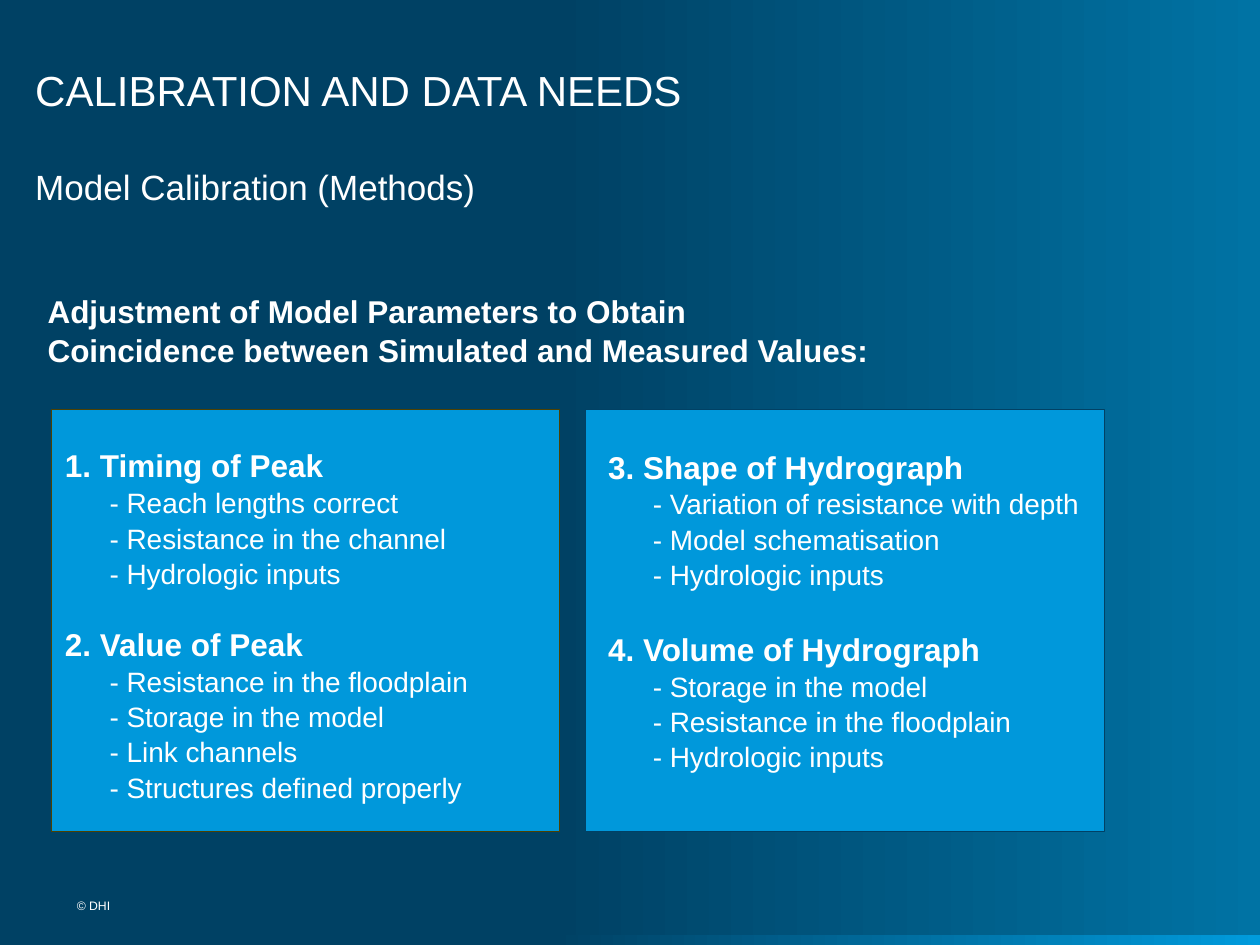
"""Build the model calibration methods slide."""
import pptx
import pptx.dml.color
import pptx.enum.shapes
import pptx.enum.text
import pptx.util
from dataclasses import dataclass

Cm = pptx.util.Cm
Pt = pptx.util.Pt


@dataclass(frozen=True)
class Theme:
    font: str = "Arial"
    text: str = "FFFFFF"
    dark: str = "004164"
    background_end: str = "0073A4"
    strip_end: str = "009BDC"
    panel: str = "0098DB"
    left_outline: str = "4D4102"
    right_outline: str = "004165"
    title_size: int = 24
    subtitle_size: int = 20
    heading_size: int = 18
    item_size: int = 16
    footer_size: int = 7


theme = Theme()


def paint_gradient(fill, end_color):
    fill.gradient()
    fill.gradient_angle = 0
    for stop, position, color in zip(fill.gradient_stops, (0.44, 1), (theme.dark, end_color)):
        stop.position = position
        stop.color.rgb = pptx.dml.color.RGBColor.from_string(color)


def write_paragraph(text_frame, text, size, bold=False, indent=0, space_before=0, line_spacing=1.05):
    paragraph = text_frame.paragraphs[0]
    if paragraph.runs:
        paragraph = text_frame.add_paragraph()
    properties = paragraph._p.get_or_add_pPr()
    properties.set("marL", str(Cm(indent)))
    properties.set("indent", "0")
    pptx.oxml.parse_xml
    paragraph.alignment = pptx.enum.text.PP_ALIGN.LEFT
    paragraph.line_spacing = line_spacing
    paragraph.space_before = Pt(space_before)
    properties.append(pptx.oxml.xmlchemy.OxmlElement("a:buNone"))
    run = paragraph.add_run()
    run.text = text
    run.font.name = theme.font
    run.font.size = Pt(size)
    run.font.bold = bold
    run.font.color.rgb = pptx.dml.color.RGBColor.from_string(theme.text)


presentation = pptx.Presentation()
presentation.slide_width = Cm(25.4)
presentation.slide_height = Cm(19.05)
slide = presentation.slides.add_slide(presentation.slide_layouts[1])
paint_gradient(slide.background.fill, theme.background_end)

rectangle = pptx.enum.shapes.MSO_SHAPE.RECTANGLE
strip = slide.shapes.add_shape(rectangle, Cm(0), Cm(18.85), Cm(25.4), Cm(0.2))
strip.shadow.inherit = False
strip.line.fill.background()
paint_gradient(strip.fill, theme.strip_end)

for left, width, outline in ((11.81, 10.46, theme.right_outline), (1.04, 10.24, theme.left_outline)):
    panel = slide.shapes.add_shape(rectangle, Cm(left), Cm(8.26), Cm(width), Cm(8.51))
    panel.shadow.inherit = False
    panel.fill.solid()
    panel.fill.fore_color.rgb = pptx.dml.color.RGBColor.from_string(theme.panel)
    panel.line.color.rgb = pptx.dml.color.RGBColor.from_string(outline)
    panel.line.width = Pt(0.75)

title = slide.shapes.title
body = slide.placeholders[1]
left_list, right_list, footer = [slide.shapes.add_textbox(0, 0, 0, 0) for _ in range(3)]

for shape, left, top, width, height in (
    (title, 0.71, 0.64, 21.84, 1.68),
    (body, 0.71, 3.3, 24, 14.22),
    (left_list, 0.71, 5.72, 17.12, 10.26),
    (right_list, 11.66, 8.86, 11.68, 7.29),
    (footer, 1.55, 18.11, 3.94, 0.48),
):
    shape.left, shape.top, shape.width, shape.height = Cm(left), Cm(top), Cm(width), Cm(height)
    text_frame = shape.text_frame
    text_frame.word_wrap = True
    text_frame.auto_size = pptx.enum.text.MSO_AUTO_SIZE.NONE
    text_frame.vertical_anchor = pptx.enum.text.MSO_ANCHOR.TOP
    if shape in (title, body, footer):
        text_frame.margin_left = text_frame.margin_right = 0
        text_frame.margin_top = text_frame.margin_bottom = 0
title.text_frame.vertical_anchor = pptx.enum.text.MSO_ANCHOR.BOTTOM

write_paragraph(title.text_frame, "CALIBRATION AND DATA NEEDS", theme.title_size, line_spacing=1)
write_paragraph(body.text_frame, "Model Calibration (Methods)", theme.subtitle_size)
write_paragraph(footer.text_frame, "© DHI", theme.footer_size, line_spacing=1)
write_paragraph(
    left_list.text_frame,
    "Adjustment of Model Parameters to Obtain Coincidence between Simulated and Measured Values:",
    theme.heading_size,
    bold=True,
)

for shape, space_before, heading, items in (
    (left_list, 43, "1. Timing of Peak",
     ("Reach lengths correct", "Resistance in the channel", "Hydrologic inputs")),
    (left_list, 19, "2. Value of Peak",
     ("Resistance in the floodplain", "Storage in the model", "Link channels",
      "Structures defined properly")),
    (right_list, 0, "3. Shape of Hydrograph",
     ("Variation of resistance with depth", "Model schematisation", "Hydrologic inputs")),
    (right_list, 21, "4. Volume of Hydrograph",
     ("Storage in the model", "Resistance in the floodplain", "Hydrologic inputs")),
):
    write_paragraph(shape.text_frame, heading, theme.heading_size, True, 0.35, space_before)
    for item in items:
        write_paragraph(shape.text_frame, f"- {item}", theme.item_size, indent=1.25)

presentation.save("out.pptx")
